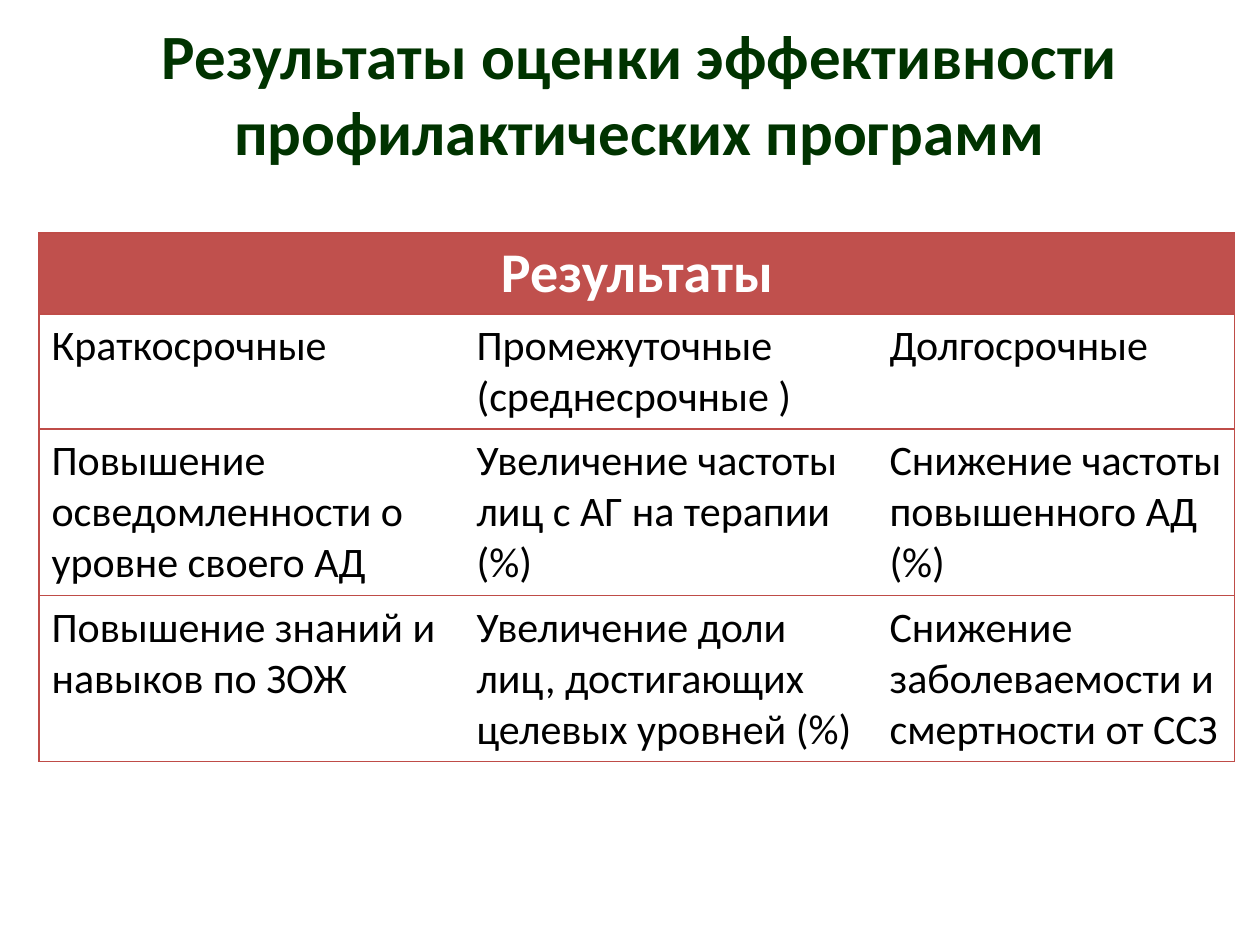
from lxml.etree import SubElement
from pptx import Presentation
from pptx.dml.color import RGBColor
from pptx.enum.text import MSO_ANCHOR, PP_ALIGN
from pptx.oxml.ns import qn
from pptx.util import Emu, Pt

ROWS = [
    ["Результаты", "", ""],
    ["Краткосрочные", "Промежуточные (среднесрочные )", "Долгосрочные"],
    ["Повышение осведомленности о уровне своего АД",
     "Увеличение частоты лиц с АГ на терапии (%)",
     "Снижение частоты повышенного АД (%)"],
    ["Повышение знаний и навыков по ЗОЖ",
     "Увеличение доли лиц, достигающих целевых уровней (%)",
     "Снижение заболеваемости и смертности от ССЗ"],
]
WIDTHS = [425, 413, 358]
HEIGHTS = [81, 115, 167, 166]


def px(count):
    return Emu(round(count * 914400 / 126))


def color(text):
    return RGBColor.from_string(text)


class Deck:
    face = "Calibri"
    green = "003300"
    red = "C0504D"
    edge = "BF4C48"

    def __init__(self):
        self.show = Presentation()
        self.show.slide_width, self.show.slide_height = px(1260), px(945)
        self.slide = self.show.slides.add_slide(self.show.slide_layouts[6])

    def label(self, frame, text, size, tint, bold=False, align=PP_ALIGN.LEFT):
        line = frame.paragraphs[0]
        line.text, line.alignment = text, align
        font = line.font
        font.name, font.size, font.bold = self.face, Pt(size), bold
        font.color.rgb = color(tint)

    def title(self, text, x, y, w, h):
        frame = self.slide.shapes.add_textbox(px(x), px(y), px(w), px(h)).text_frame
        frame.word_wrap = True
        frame.vertical_anchor = MSO_ANCHOR.MIDDLE
        self.label(frame, text, 36, self.green, True, PP_ALIGN.CENTER)

    def border(self, cell, sides):
        props = cell._tc.get_or_add_tcPr()
        for side in "LRTB":
            line = SubElement(props, qn(f"a:ln{side}"), w=str(Pt(0.75)))
            if side in sides:
                fill = SubElement(line, qn("a:solidFill"))
                SubElement(fill, qn("a:srgbClr"), val=self.edge)
            else:
                SubElement(line, qn("a:noFill"))

    def table(self, rows, x, y, widths, heights):
        grid = self.slide.shapes.add_table(
            len(rows), len(widths), px(x), px(y), px(sum(widths)), px(sum(heights))).table
        for col, width in zip(grid.columns, widths):
            col.width = px(width)
        for row, height in zip(grid.rows, heights):
            row.height = px(height)
        last = len(widths) - 1
        grid.cell(0, 0).merge(grid.cell(0, last))
        for r, row in enumerate(rows):
            for c, text in enumerate(row):
                cell = grid.cell(r, c)
                self.border(cell, "TB" + "L" * (c == 0) + "R" * (c == last))
                if r:
                    cell.fill.background()
                    self.label(cell.text_frame, text, 24, "000000")
                    continue
                cell.fill.solid()
                cell.fill.fore_color.rgb = color(self.red)
                cell.vertical_anchor = MSO_ANCHOR.MIDDLE
                if text:
                    self.label(cell.text_frame, text, 32, "FFFFFF", True, PP_ALIGN.CENTER)


def main():
    deck = Deck()
    deck.title("Результаты оценки эффективности профилактических программ", 53, 1, 1173, 183)
    deck.table(ROWS, 39, 233, WIDTHS, HEIGHTS)
    deck.show.save("out.pptx")


if __name__ == "__main__":
    main()
